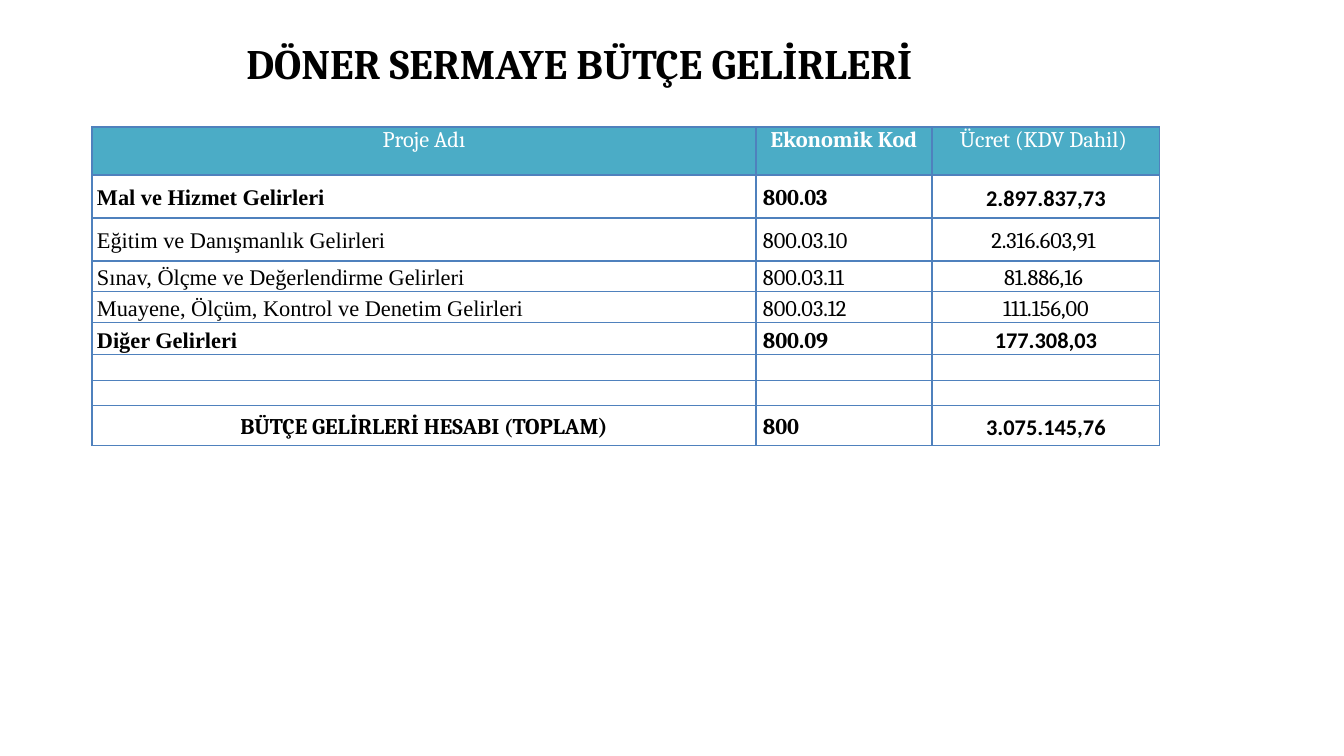
from dataclasses import dataclass

import pptx
import pptx.dml.color
import pptx.enum.text
import pptx.oxml.ns
import pptx.util
from lxml import etree

EMU_PER_PX = 12192000 / 1344
COLORS = {"black": "000000", "white": "FFFFFF", "header": "4BACC6", "border": "4F81BD"}
LEFT = pptx.enum.text.PP_ALIGN.LEFT
CENTER = pptx.enum.text.PP_ALIGN.CENTER
TOP = pptx.enum.text.MSO_ANCHOR.TOP
MIDDLE = pptx.enum.text.MSO_ANCHOR.MIDDLE
qn = pptx.oxml.ns.qn

COLUMN_WIDTHS = [664, 176, 228]
HEADERS = ["Proje Adı", "Ekonomik Kod", "Ücret (KDV Dahil) "]


@dataclass
class Income:
    height: int
    name: str = ""
    code: str = ""
    amount: str = ""
    bold: bool = False


@dataclass
class Style:
    font: str = "Cambria"
    size: int = 16
    bold: bool = False
    color: str = "black"
    align: int = LEFT
    line_spacing: float = 1.15
    space_after: int = 10


INCOMES = [
    Income(43, "Mal ve Hizmet Gelirleri", "800.03", "2.897.837,73", True),
    Income(43, "Eğitim ve Danışmanlık Gelirleri", "800.03.10", "2.316.603,91 "),
    Income(30, "Sınav, Ölçme ve Değerlendirme Gelirleri", "800.03.11", "81.886,16 "),
    Income(31, "Muayene, Ölçüm, Kontrol ve Denetim Gelirleri", "800.03.12", "111.156,00"),
    Income(32, "Diğer Gelirleri", "800.09", "177.308,03", True),
    Income(26),
    Income(25),
]
TOTAL = Income(40, "BÜTÇE GELİRLERİ HESABI", "800", "3.075.145,76", True)
TOTAL_SUFFIX = [(" (", 15), ("TOPLAM)", 16)]
HEADER_HEIGHT = 48


def px(value: int) -> pptx.util.Emu:
    return pptx.util.Emu(round(value * EMU_PER_PX))


def rgb(name: str) -> pptx.dml.color.RGBColor:
    return pptx.dml.color.RGBColor.from_string(COLORS[name])


def add_run(paragraph, text: str, style: Style, size: int = 0) -> None:
    run = paragraph.add_run()
    run.text = text
    run.font.name = style.font
    run.font.size = pptx.util.Pt(size or style.size)
    run.font.bold = style.bold
    run.font.color.rgb = rgb(style.color)


def write(paragraph, text: str, style: Style) -> None:
    paragraph.alignment = style.align
    paragraph.line_spacing = style.line_spacing
    paragraph.space_after = pptx.util.Pt(style.space_after)
    add_run(paragraph, text, style)


def format_cell(cell, margin: int, anchor: int) -> None:
    cell.margin_left = cell.margin_right = px(margin)
    cell.margin_top = cell.margin_bottom = 0
    cell.vertical_anchor = anchor
    # Borders come before the fill in the cell properties
    properties = cell._tc.get_or_add_tcPr()
    for side in ("a:lnL", "a:lnR", "a:lnT", "a:lnB"):
        line = etree.SubElement(properties, qn(side), w=str(pptx.util.Pt(1)))
        fill = etree.SubElement(line, qn("a:solidFill"))
        etree.SubElement(fill, qn("a:srgbClr"), val=COLORS["border"])
    cell.fill.background()


def add_title(slide) -> None:
    box = slide.shapes.add_textbox(0, px(28), px(1159), px(75))
    frame = box.text_frame
    frame.word_wrap = True
    frame.vertical_anchor = MIDDLE
    style = Style(size=30, bold=True, align=CENTER, line_spacing=0.9, space_after=0)
    write(frame.paragraphs[0], "DÖNER SERMAYE BÜTÇE GELİRLERİ", style)


def fill_header(table) -> None:
    for column, text in enumerate(HEADERS):
        cell = table.cell(0, column)
        format_cell(cell, 7, TOP)
        cell.fill.solid()
        cell.fill.fore_color.rgb = rgb("header")
        style = Style(bold=column == 1, color="white", align=CENTER,
                      line_spacing=1.0, space_after=0)
        write(cell.text_frame.paragraphs[0], text, style)


def fill_income(table, row: int, income: Income) -> None:
    is_total = income is TOTAL
    styles = [
        Style("Cambria" if is_total else "Times New Roman", bold=income.bold,
              align=CENTER if is_total else LEFT),
        Style(bold=income.bold),
        Style("Calibri" if income.bold else "Cambria", bold=income.bold, align=CENTER),
    ]
    texts = [income.name, income.code, income.amount]
    for column, (text, style) in enumerate(zip(texts, styles)):
        cell = table.cell(row, column)
        format_cell(cell, 5 if column == 0 and not is_total else 7, MIDDLE)
        paragraph = cell.text_frame.paragraphs[0]
        if text:
            write(paragraph, text, style)
        else:
            # A small size keeps the empty row low
            etree.SubElement(paragraph._p, qn("a:endParaRPr"), sz="1000")
        if is_total and column == 0:
            for suffix, size in TOTAL_SUFFIX:
                add_run(paragraph, suffix, style, size)


def add_income_table(slide) -> None:
    incomes = [*INCOMES, TOTAL]
    heights = [HEADER_HEIGHT] + [income.height for income in incomes]
    frame = slide.shapes.add_table(len(heights), len(COLUMN_WIDTHS), px(92), px(127),
                                   px(sum(COLUMN_WIDTHS)), px(sum(heights)))
    table = frame.table
    table.first_row = table.horz_banding = False
    for column, width in zip(table.columns, COLUMN_WIDTHS):
        column.width = px(width)
    for row, height in zip(table.rows, heights):
        row.height = px(height)
    fill_header(table)
    for row, income in enumerate(incomes, start=1):
        fill_income(table, row, income)


def main() -> None:
    presentation = pptx.Presentation()
    presentation.slide_width = px(1344)
    presentation.slide_height = px(756)
    slide = presentation.slides.add_slide(presentation.slide_layouts[6])
    add_title(slide)
    add_income_table(slide)
    presentation.save("out.pptx")


if __name__ == "__main__":
    main()
